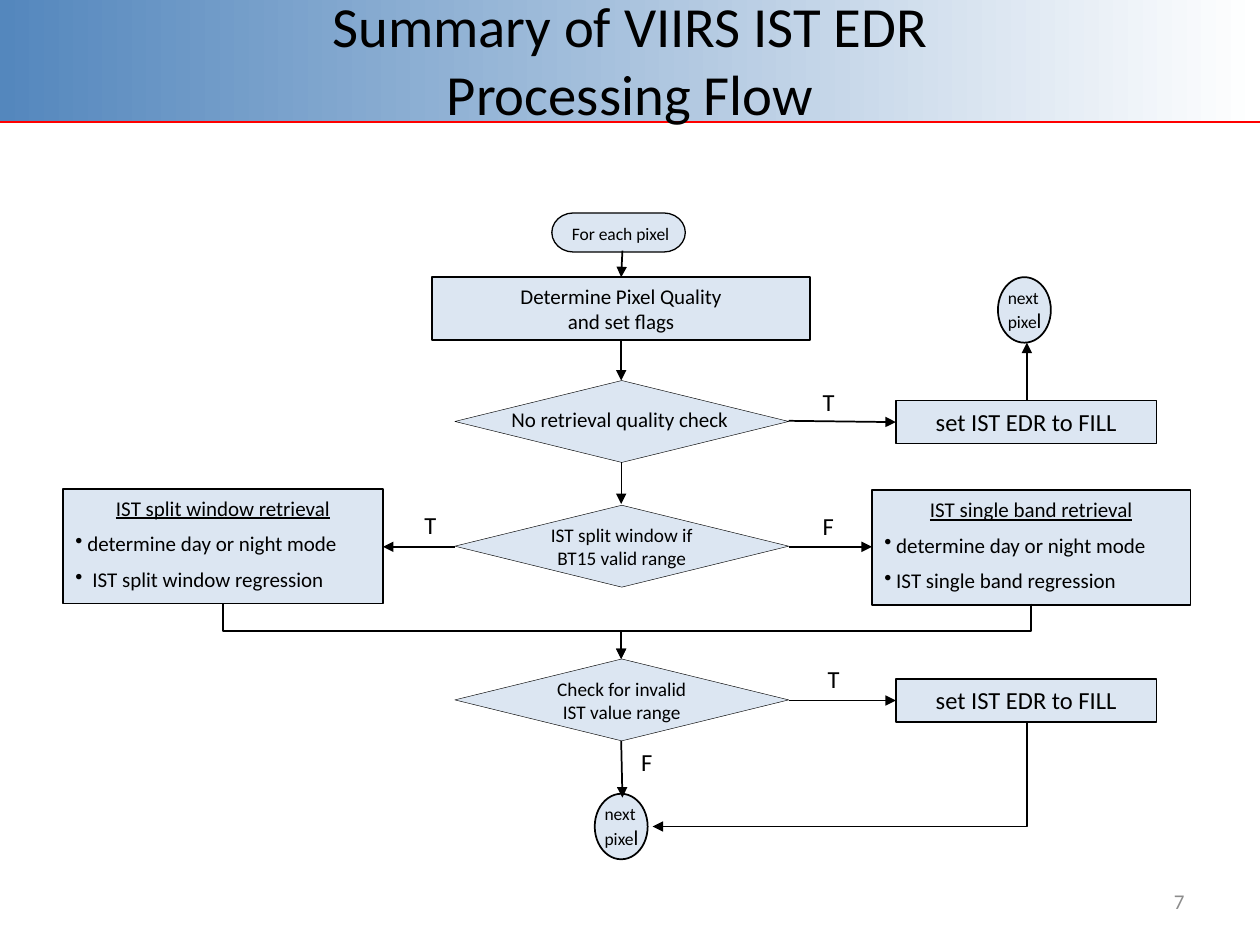
import pptx
import pptx.dml.color
import pptx.enum.shapes
import pptx.enum.text
import pptx.oxml
import pptx.oxml.ns
import pptx.util

COLUMNS, ROWS = 100, 75
INK, PANEL = "000000", "DCE6F2"
SHAPE = pptx.enum.shapes.MSO_SHAPE
LINK = pptx.enum.shapes.MSO_CONNECTOR
ALIGN = pptx.enum.text.PP_ALIGN
ANCHOR = pptx.enum.text.MSO_ANCHOR
FIT = pptx.enum.text.MSO_AUTO_SIZE
WIDTH, HEIGHT = pptx.util.Inches(10), pptx.util.Inches(7.5)


def color(code):
    """Turn a hex string into a colour."""
    return pptx.dml.color.RGBColor.from_string(code)


def across(columns):
    """Turn grid columns into a length."""
    return round(WIDTH * columns / COLUMNS)


def down(rows):
    """Turn grid rows into a length."""
    return round(HEIGHT * rows / ROWS)


def place(left, top, width, height):
    """Turn a grid area into four lengths."""
    return across(left), down(top), across(width), down(height)


def apply(target, values):
    """Set each named attribute on the target."""
    for name, value in values.items():
        setattr(target, name, value)


def element(parent, tag, **attributes):
    """Append a drawing element to an XML parent."""
    child = pptx.oxml.parse_xml(f"<a:{tag} {pptx.oxml.ns.nsdecls('a')}/>")
    for name, value in attributes.items():
        child.set(name, value)
    parent.append(child)


def line(*spans, hang=0, **layout):
    """Describe a paragraph made of (text, font values) spans."""
    return spans, hang, layout


def write(box, lines, size, code=INK, **frame):
    """Fill a box with paragraphs, breaking lines at each newline."""
    apply(box.text_frame, {"word_wrap": True, **frame})
    for index, (spans, hang, layout) in enumerate(lines):
        para = box.text_frame.paragraphs[0] if index == 0 else box.text_frame.add_paragraph()
        apply(para, layout)
        if hang:
            properties = para._p.get_or_add_pPr()
            properties.set("marL", str(across(hang)))
            properties.set("indent", str(-across(hang)))
            element(properties, "buFontTx")
            element(properties, "buChar", char="•")
        for text, values in spans:
            for row, piece in enumerate(text.split("\n")):
                if row:
                    para.add_line_break()
                span = para.add_run()
                span.text = piece
                apply(span.font, {"name": "Calibri", "size": pptx.util.Pt(size), **values})
                span.font.color.rgb = color(code)


def centered(*texts):
    """Describe plain centred paragraphs."""
    return [line((text, {}), alignment=ALIGN.CENTER) for text in texts]


def node(page, kind, area, weight=1, lines=(), size=12, anchor=ANCHOR.TOP):
    """Draw an outlined flowchart shape."""
    box = page.shapes.add_shape(kind, *place(*area))
    box.shadow.inherit = False
    box.fill.solid()
    box.fill.fore_color.rgb = color(PANEL)
    box.line.color.rgb = color(INK)
    box.line.width = pptx.util.Pt(weight)
    write(box, lines, size, vertical_anchor=anchor)


def label(page, area, lines, size):
    """Place unwrapped text over the chart."""
    box = page.shapes.add_textbox(*place(*area))
    write(box, lines, size, word_wrap=False, auto_size=FIT.SHAPE_TO_FIT_TEXT)


def wire(page, start, end, weight=1, code=INK, arrow=True, kind=LINK.STRAIGHT):
    """Draw a connector between two grid points."""
    link = page.shapes.add_connector(
        kind, across(start[0]), down(start[1]), across(end[0]), down(end[1]))
    link.line.color.rgb = color(code)
    link.line.width = pptx.util.Pt(weight)
    if arrow:
        element(link.line._get_or_add_ln(), "tailEnd", type="triangle")
    element(link._element.spPr, "effectLst")
    return link


def elbow(page, start, end, preset):
    """Draw a bent arrow that leaves its start downwards."""
    (x1, y1), (x2, y2) = start, end
    x, y = (x1 + x2) / 2, (y1 + y2) / 2
    half_width, half_height = abs(y2 - y1) / 2, abs(x2 - x1) / 2
    link = wire(page, (x - half_width, y - half_height), (x + half_width, y + half_height),
                kind=LINK.ELBOW)
    properties = link._element.spPr
    properties.find(pptx.oxml.ns.qn("a:prstGeom")).set("prst", preset)
    turn = {"rot": "5400000"} if x2 < x1 else {"rot": "16200000", "flipH": "1"}
    for name, value in turn.items():
        properties.find(pptx.oxml.ns.qn("a:xfrm")).set(name, value)


def header(page):
    """Draw the title band, its rule, the title and the page number."""
    band = page.shapes.add_shape(SHAPE.RECTANGLE, *place(0, -0.1, 100, 9.7))
    band.shadow.inherit = False
    band.line.fill.background()
    band.fill.gradient()
    band.fill.gradient_angle = 0
    for stop, position, code in zip(band.fill.gradient_stops, (0, 1), ("5487BD", "FFFFFF")):
        stop.position = position
        stop.color.rgb = color(code)
    wire(page, (0, 9.7), (100, 9.7), 1.25, "FF0000", arrow=False)
    title = page.shapes.add_textbox(*place(5, 0.3, 90, 8.7))
    write(title, centered("Summary of VIIRS IST EDR\nProcessing Flow"), 32.4,
          vertical_anchor=ANCHOR.MIDDLE)
    number = page.shapes.add_textbox(*place(71.7, 69.5, 23.3, 4))
    write(number, [line(("7", {}), alignment=ALIGN.RIGHT)], 12, "8C8C8C",
          vertical_anchor=ANCHOR.MIDDLE)


def retrieval(page, area, heading, items):
    """Draw a box with an underlined heading and bullets."""
    gap = {"alignment": ALIGN.LEFT, "space_before": pptx.util.Pt(6)}
    lines = [line((heading, {"underline": True}), alignment=ALIGN.CENTER)]
    lines += [line((text, {}), hang=hang, **gap) for text, hang in items]
    node(page, SHAPE.RECTANGLE, area, lines=lines)


def next_pixel(page, left, top):
    """Draw the end point of a branch."""
    node(page, SHAPE.FLOWCHART_CONNECTOR, (left, top, 4.2, 5.2))
    lines = [line(("next", {})), line(("pixe", {}), ("l", {"size": pptx.util.Pt(12)}))]
    label(page, (left - 0.2, top + 0.25, 4.9, 4.7), lines, 10)


def main():
    """Build the slide and save it."""
    deck = pptx.Presentation()
    apply(deck, {"slide_width": WIDTH, "slide_height": HEIGHT})
    page = deck.slides.add_slide(deck.slide_layouts[6])
    header(page)

    node(page, SHAPE.FLOWCHART_TERMINATOR, (43.8, 16.9, 10.6, 3.1), 0.75)
    label(page, (44.4, 17.2, 9.9, 2.7), [line(("For each pixel", {}))], 10)
    node(page, SHAPE.RECTANGLE, (34.3, 22, 30, 5),
         lines=centered("Determine Pixel Quality", "and set flags"))
    for top, texts in ((30.2, []), (40.1, ["IST split window if BT15 valid range"]),
                       (52.3, ["Check for invalid IST value range"])):
        node(page, SHAPE.FLOWCHART_DECISION, (36.1, top, 26.5, 6.5), 0.25,
             centered(*texts), 11, ANCHOR.MIDDLE)
    label(page, (39.6, 31.8, 19.4, 3), [line(("No retrieval quality check", {}))], 12)
    for top in (31.8, 53.9):
        node(page, SHAPE.RECTANGLE, (71.1, top, 20.7, 3.4),
             lines=centered("set IST EDR to FILL"), size=14)
    mode = ("determine day or night mode", 0.95)
    retrieval(page, (69.2, 38.9, 25.3, 9.1), "IST single band retrieval",
              [mode, ("IST single band regression", 0.95)])
    retrieval(page, (5, 38.8, 25.4, 9.1), "IST split window retrieval",
              [mode, ("IST split window regression", 1.35)])
    next_pixel(page, 47.2, 63)
    next_pixel(page, 79.2, 22)

    for start, end, weight in (
            ((49.4, 19.9), (49.3, 22), 1), ((49.3, 27), (49.3, 30.2), 1),
            ((49.3, 36.7), (49.3, 40), 0.75), ((49.3, 58.8), (49.4, 63.3), 1),
            ((62.6, 33.4), (71.1, 33.5), 1), ((62.6, 43.4), (69.2, 43.4), 1),
            ((62.6, 55.6), (71.1, 55.6), 1), ((36.1, 43.4), (30.4, 43.4), 1),
            ((81.5, 31.8), (81.5, 27.2), 1)):
        wire(page, start, end, weight)
    for left in (81.8, 17.7):
        elbow(page, (left, 47.9), (49.3, 52.3), "bentConnector3")
    elbow(page, (81.5, 57.3), (51.8, 65.6), "bentConnector2")
    for text, left, top in (("T", 64.3, 30.2), ("T", 32.7, 40), ("F", 64.3, 40.1),
                            ("T", 64.7, 52.2), ("F", 49.9, 58.8)):
        label(page, (left, top, 3, 3.4), [line((text, {}))], 14)
    deck.save("out.pptx")


if __name__ == "__main__":
    main()
